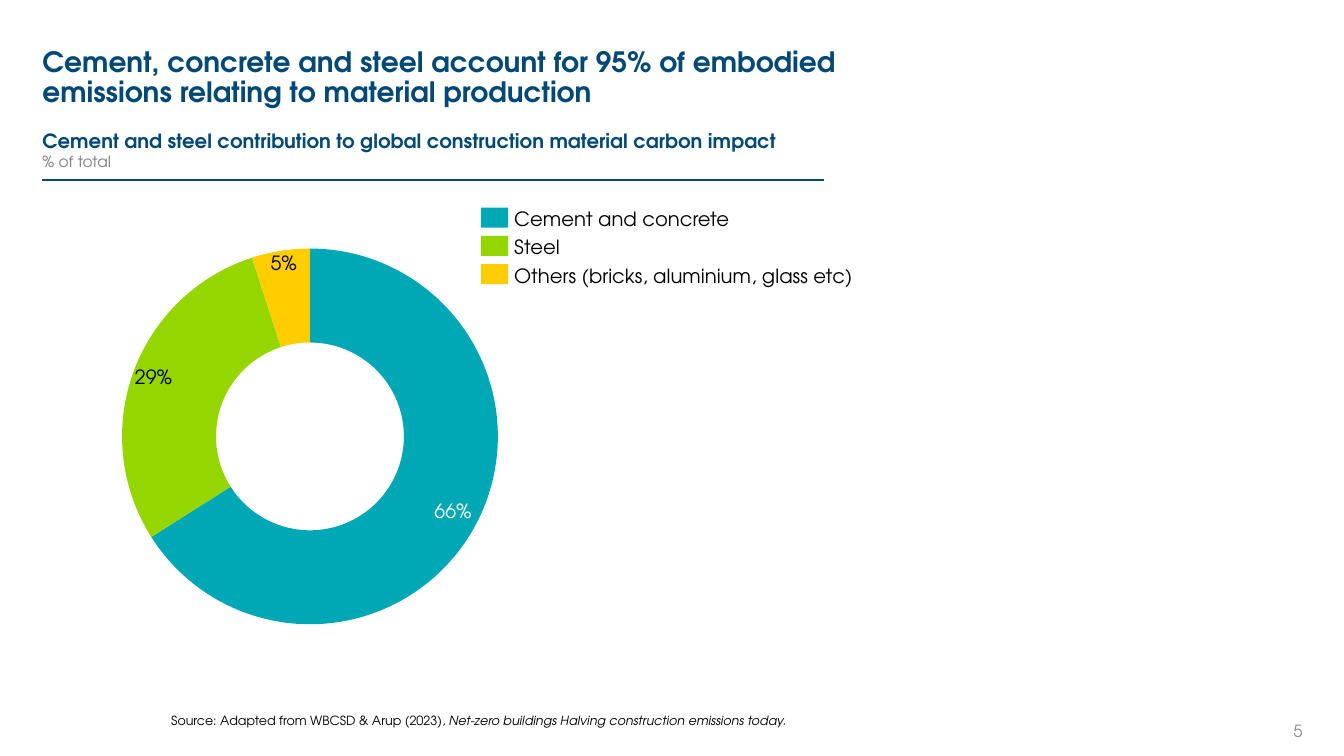
from lxml.etree import SubElement
from pptx import Presentation
from pptx.chart.data import CategoryChartData
from pptx.dml.color import RGBColor
from pptx.enum.chart import XL_CHART_TYPE as ChartType
from pptx.enum.shapes import MSO_CONNECTOR as Connector, MSO_SHAPE as Shape
from pptx.enum.text import MSO_ANCHOR as Anchor, PP_ALIGN as Align
from pptx.oxml import parse_xml
from pptx.oxml.ns import nsdecls, qn
from pptx.util import Inches, Pt

NAVY, GREY, MID_GREY, BLACK, WHITE = "004876", "8C8C8C", "7F7F7F", "000000", "FFFFFF"
MATERIALS = [
    ("Cement and concrete", 66, "00A7B5", WHITE, (0.05, 0.02)),
    ("Steel", 29, "95D600", BLACK, (-0.06, -0.02)),
    ("Others (bricks, aluminium, glass etc)", 5, "FFCD00", BLACK, (-0.01, -0.07)),
]


def color(hex_code):
    return RGBColor.from_string(hex_code)


def style_font(font, size, hex_code, bold=False, italic=False):
    font.name = "TeX Gyre Adventor"
    font.size = Pt(size)
    font.bold = bold
    font.italic = italic
    font.color.rgb = color(hex_code)


def add_run(paragraph, text, size=14, hex_code=BLACK, bold=False, italic=False,
            align=Align.LEFT, spacing=1.0):
    paragraph.alignment = align
    paragraph.line_spacing = spacing
    run = paragraph.add_run()
    run.text = text
    style_font(run.font, size, hex_code, bold, italic)


def manual_layout(modes="", **fractions):
    sizes = "".join(f'<c:{side} val="{value}"/>' for side, value in fractions.items())
    return parse_xml(
        f'<c:layout {nsdecls("c")}><c:manualLayout>{modes}{sizes}</c:manualLayout></c:layout>')


class SlideBuilder:
    def __init__(self, presentation):
        self.slide = presentation.slides.add_slide(presentation.slide_layouts[5])
        self.shapes = self.slide.shapes

    def frame(self, holder, anchor, inset=(0, 0)):
        frame = holder.text_frame
        frame.word_wrap = True
        frame.vertical_anchor = anchor
        frame.margin_left = frame.margin_right = Inches(inset[0])
        frame.margin_top = frame.margin_bottom = Inches(inset[1])
        return frame

    def title(self, box, text):
        title = self.shapes.title
        title.left, title.top, title.width, title.height = map(Inches, box)
        frame = self.frame(title, Anchor.MIDDLE)
        add_run(frame.paragraphs[0], text, size=20, hex_code=NAVY, bold=True, spacing=0.9)

    def text(self, box, anchor=Anchor.TOP, **frame_format):
        return self.frame(self.shapes.add_textbox(*map(Inches, box)), anchor, **frame_format)

    def rule(self, left, right, top):
        rule = self.shapes.add_connector(
            Connector.STRAIGHT, Inches(left), Inches(top), Inches(right), Inches(top))
        rule.line.color.rgb = color(NAVY)
        rule.line.width = Pt(1.5)
        SubElement(rule._element.spPr, qn("a:effectLst"))

    def swatch(self, box, hex_code):
        swatch = self.shapes.add_shape(Shape.RECTANGLE, *map(Inches, box))
        swatch.shadow.inherit = False
        swatch.fill.solid()
        swatch.fill.fore_color.rgb = color(hex_code)
        swatch.line.fill.background()

    def doughnut(self, box, materials):
        data = CategoryChartData(number_format='0"%"')
        data.categories = [name for name, *_ in materials]
        data.add_series("% of total", [share for _, share, *_ in materials])
        chart = self.shapes.add_chart(ChartType.DOUGHNUT, *map(Inches, box), data).chart
        chart.has_legend = False
        chart.has_title = False
        style_font(chart.font, 14, BLACK)
        series = chart.plots[0].series[0]
        series.data_labels.show_value = True
        series.data_labels.show_percentage = False
        for index, (_, _, hex_code, label_color, (x, y)) in enumerate(materials):
            point = series.points[index]
            point.format.fill.solid()
            point.format.fill.fore_color.rgb = color(hex_code)
            point.format.line.fill.background()
            style_font(point.data_label.font, 14, label_color)
            label = series.data_labels._element.findall(qn("c:dLbl"))[index]
            label.insert(1, manual_layout(x=x, y=y))
        for leader in chart._chartSpace.iter(qn("c:showLeaderLines")):
            leader.set("val", "0")
        self.place_plot(chart, x=0.023, y=0.093, w=0.954, h=0.814)

    def place_plot(self, chart, **fractions):
        plot_area = chart._chartSpace.chart.plotArea
        for layout in plot_area.findall(qn("c:layout")):
            plot_area.remove(layout)
        modes = '<c:layoutTarget val="inner"/><c:xMode val="edge"/><c:yMode val="edge"/>'
        plot_area.insert(0, manual_layout(modes, **fractions))

    def legend(self, left, top, pitch, materials):
        for row, (name, _, hex_code, *_) in enumerate(materials):
            row_top = top + row * pitch
            self.swatch((left, row_top, 0.27, 0.2), hex_code)
            label = self.text((left + 0.33, row_top + 0.02, 3.8, 0.21), Anchor.MIDDLE)
            add_run(label.paragraphs[0], name, spacing=0.9)


def main():
    presentation = Presentation()
    presentation.slide_width = Inches(13.33)
    presentation.slide_height = Inches(7.5)
    builder = SlideBuilder(presentation)

    builder.title((0.42, 0.48, 8.62, 0.6),
                  "Cement, concrete and steel account for 95% of embodied "
                  "emissions relating to material production")

    page_number = builder.text((12.37, 6.94, 0.55, 0.41), Anchor.BOTTOM)
    add_run(page_number.paragraphs[0], "5", size=12, hex_code=GREY, align=Align.RIGHT)

    source = builder.text((1.6, 7.02, 10.58, 0.41), inset=(0.1, 0.05)).paragraphs[0]
    add_run(source, "Source: Adapted from WBCSD & Arup (2023), ", size=9)
    add_run(source, "Net-zero buildings Halving construction emissions today.", size=9, italic=True)

    builder.rule(0.42, 8.17, 1.79)
    heading = builder.text((0.42, 1.28, 9.59, 0.42))
    add_run(heading.paragraphs[0],
            "Cement and steel contribution to global construction material carbon impact",
            hex_code=NAVY, bold=True)
    add_run(heading.add_paragraph(), "% of total", size=11, hex_code=MID_GREY)

    builder.doughnut((1.12, 2.04, 3.91, 4.58), MATERIALS)
    builder.legend(4.77, 2.06, 0.28, MATERIALS)
    presentation.save("out.pptx")


if __name__ == "__main__":
    main()
